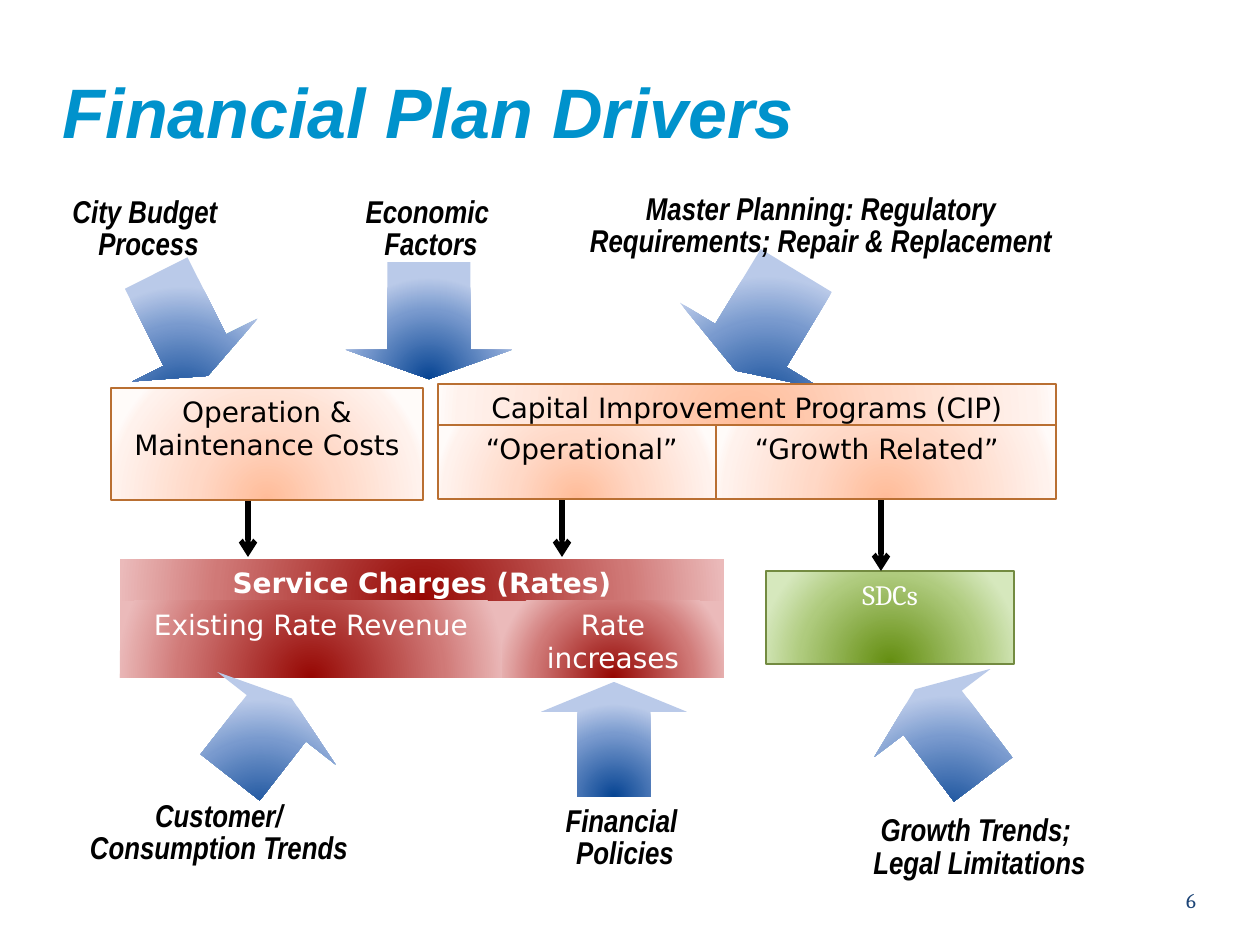
from dataclasses import dataclass

from lxml.etree import SubElement
from pptx import Presentation
from pptx.dml.color import RGBColor
from pptx.enum.shapes import MSO_CONNECTOR, MSO_SHAPE
from pptx.enum.text import MSO_ANCHOR, PP_ALIGN
from pptx.oxml.ns import qn
from pptx.util import Emu, Pt

EMU_PER_PX = 914400 / 126


@dataclass(frozen=True)
class TextStyle:
    """Describe the type used for one kind of text."""
    font: str
    size: int
    color: str
    bold: bool = False
    italic: bool = False


@dataclass(frozen=True)
class BoxStyle:
    """Describe a box: gradient stops, outline and type."""
    stops: tuple
    outline: str | None
    text: TextStyle


class Theme:
    """Hold the colours and type sizes of the slide."""
    title = TextStyle("Arial", 40, "0092CC", True, True)
    label = TextStyle("Arial Narrow", 18, "000000", True, True)
    page = TextStyle("Cambria", 12, "1D4577")
    blue = ((0, "064493"), (68, "799ACE"), (100, "BACAE9"))
    red = ((0, "960703"), (68, "D07977"), (100, "EBBABA"))
    green = ((0, "638D0F"), (68, "AFCB7E"), (100, "D6E8BD"))
    orange = ((0, "FFBC99"), (43, "FFD8C6"), (93, "FFF2ED"), (100, "FFFBF9"))
    cost = BoxStyle(orange, "B96F32", TextStyle("DejaVu Sans", 16, "000000"))
    rate = BoxStyle(red, None, TextStyle("DejaVu Sans", 16, "FFFFFF"))
    rate_heading = BoxStyle(red, None, TextStyle("DejaVu Sans", 16, "FFFFFF", True))
    development = BoxStyle(green, "738B41", TextStyle("Cambria", 16, "FFFFFF"))
    flow = "000000"


def px(value):
    """Turn pixels into EMU."""
    return Emu(round(value * EMU_PER_PX))


def write(frame, lines, style, align, spacing=None):
    """Write one paragraph per line into a text frame."""
    frame.word_wrap = True
    for index, line in enumerate(lines):
        paragraph = frame.add_paragraph() if index else frame.paragraphs[0]
        paragraph.alignment = align
        if spacing:
            paragraph.line_spacing = spacing
        run = paragraph.add_run()
        run.text = line
        font = run.font
        font.name, font.size = style.font, Pt(style.size)
        font.bold, font.italic = style.bold, style.italic
        font.color.rgb = RGBColor.from_string(style.color)


def fill_radial(shape, stops):
    """Fill a shape with a circular gradient centred below it."""
    shape.fill.background()
    placeholder = shape._element.spPr.find(qn("a:noFill"))
    gradient = placeholder.makeelement(qn("a:gradFill"), {"rotWithShape": "1"})
    stop_list = SubElement(gradient, qn("a:gsLst"))
    for position, color in stops:
        stop = SubElement(stop_list, qn("a:gs"), pos=str(position * 1000))
        SubElement(stop, qn("a:srgbClr"), val=color)
    circle = SubElement(gradient, qn("a:path"), path="circle")
    SubElement(circle, qn("a:fillToRect"), l="50000", t="130000", r="50000", b="-30000")
    placeholder.getparent().replace(placeholder, gradient)


def add_gradient_shape(slide, kind, bounds, stops, outline=None):
    """Add a preset shape with a gradient and an optional outline."""
    shape = slide.shapes.add_shape(kind, *map(px, bounds))
    shape.shadow.inherit = False
    fill_radial(shape, stops)
    if outline:
        shape.line.color.rgb = RGBColor.from_string(outline)
        shape.line.width = Pt(0.75)
    else:
        shape.line.fill.background()
    return shape


def add_box(slide, text, bounds, style, indent=None):
    """Add a box with centred text, or left text set in by an indent."""
    shape = add_gradient_shape(slide, MSO_SHAPE.RECTANGLE, bounds, style.stops, style.outline)
    frame = shape.text_frame
    frame.vertical_anchor = MSO_ANCHOR.TOP
    if indent:
        frame.margin_left = px(indent)
    write(frame, [text], style.text, PP_ALIGN.LEFT if indent else PP_ALIGN.CENTER)


def add_text(slide, lines, bounds, style, align, spacing=None, footed=False):
    """Add a text box, standing on its bottom edge when footed."""
    frame = slide.shapes.add_textbox(*map(px, bounds)).text_frame
    if footed:
        frame.vertical_anchor = MSO_ANCHOR.BOTTOM
        frame.margin_left = frame.margin_right = frame.margin_bottom = 0
    write(frame, lines, style, align, spacing)


def add_driver(slide, lines, label_bounds, arrow_bounds, rotation=0, flips=("flipH",), head=0.25):
    """Add a block arrow and the label of the driver behind it."""
    arrow = add_gradient_shape(slide, MSO_SHAPE.DOWN_ARROW, arrow_bounds, Theme.blue)
    arrow.adjustments[0], arrow.adjustments[1] = 0.5, head
    arrow.rotation = rotation
    for flip in flips:
        arrow._element.spPr.find(qn("a:xfrm")).set(flip, "1")
    add_text(slide, lines, label_bounds, Theme.label, PP_ALIGN.CENTER, 0.85)


def add_flow(slide, x, top, length=95):
    """Add a vertical line with an arrowhead at its lower end."""
    connector = slide.shapes.add_connector(
        MSO_CONNECTOR.STRAIGHT, px(x), px(top), px(x), px(top + length))
    connector.line.color.rgb = RGBColor.from_string(Theme.flow)
    connector.line.width = Pt(3)
    SubElement(connector.line._get_or_add_ln(), qn("a:tailEnd"), type="arrow")
    SubElement(connector._element.spPr, qn("a:effectLst"))


def main():
    """Build the slide and save it."""
    presentation = Presentation()
    presentation.slide_width, presentation.slide_height = px(1260), px(945)
    slide = presentation.slides.add_slide(presentation.slide_layouts[6])

    add_text(slide, ["Financial Plan Drivers"], (63, 0, 1134, 152), Theme.title,
             PP_ALIGN.LEFT, 0.8, footed=True)

    add_box(slide, "SDCs", (766, 571, 248, 93), Theme.development)
    for x, top in ((881, 476), (248, 462), (562, 462)):
        add_flow(slide, x, top)
    add_box(slide, "Service Charges (Rates)", (120, 559, 604, 42), Theme.rate_heading)
    add_box(slide, "Existing Rate Revenue", (120, 601, 382, 77), Theme.rate)
    add_box(slide, "Rate increases", (502, 601, 222, 77), Theme.rate)

    add_driver(slide, ["Master Planning: Regulatory Requirements; Repair & Replacement"],
               (548, 189, 546, 78), (683, 262, 166, 117), 31.2)

    add_box(slide, "Operation & Maintenance Costs", (111, 388, 312, 112), Theme.cost)
    add_box(slide, "Capital Improvement Programs (CIP)", (438, 384, 618, 41), Theme.cost)
    add_box(slide, "“Operational”", (438, 425, 278, 74), Theme.cost, indent=48)
    add_box(slide, "“Growth Related”", (716, 425, 340, 74), Theme.cost, indent=39)

    add_driver(slide, ["Customer/", "Consumption Trends"],
               (4, 796, 430, 78), (186, 688, 150, 100), 38, ("flipH", "flipV"))
    add_driver(slide, ["Financial", " Policies"],
               (422, 801, 399, 78), (541, 682, 146, 115), 0, ("flipV",), 0.26)
    add_driver(slide, ["Economic ", "Factors"], (192, 192, 478, 78), (346, 262, 166, 117))
    add_driver(slide, ["City Budget ", "Process"],
               (0, 192, 297, 78), (112, 267, 140, 115), 333.4)
    add_driver(slide, ["Growth Trends; ", "Legal Limitations"],
               (798, 810, 363, 78), (876, 678, 146, 113), 322.9, ("flipV",), 0.26)

    add_text(slide, ["6"], (1091, 863, 105, 50), Theme.page, PP_ALIGN.RIGHT, footed=True)
    presentation.save("out.pptx")


if __name__ == "__main__":
    main()
